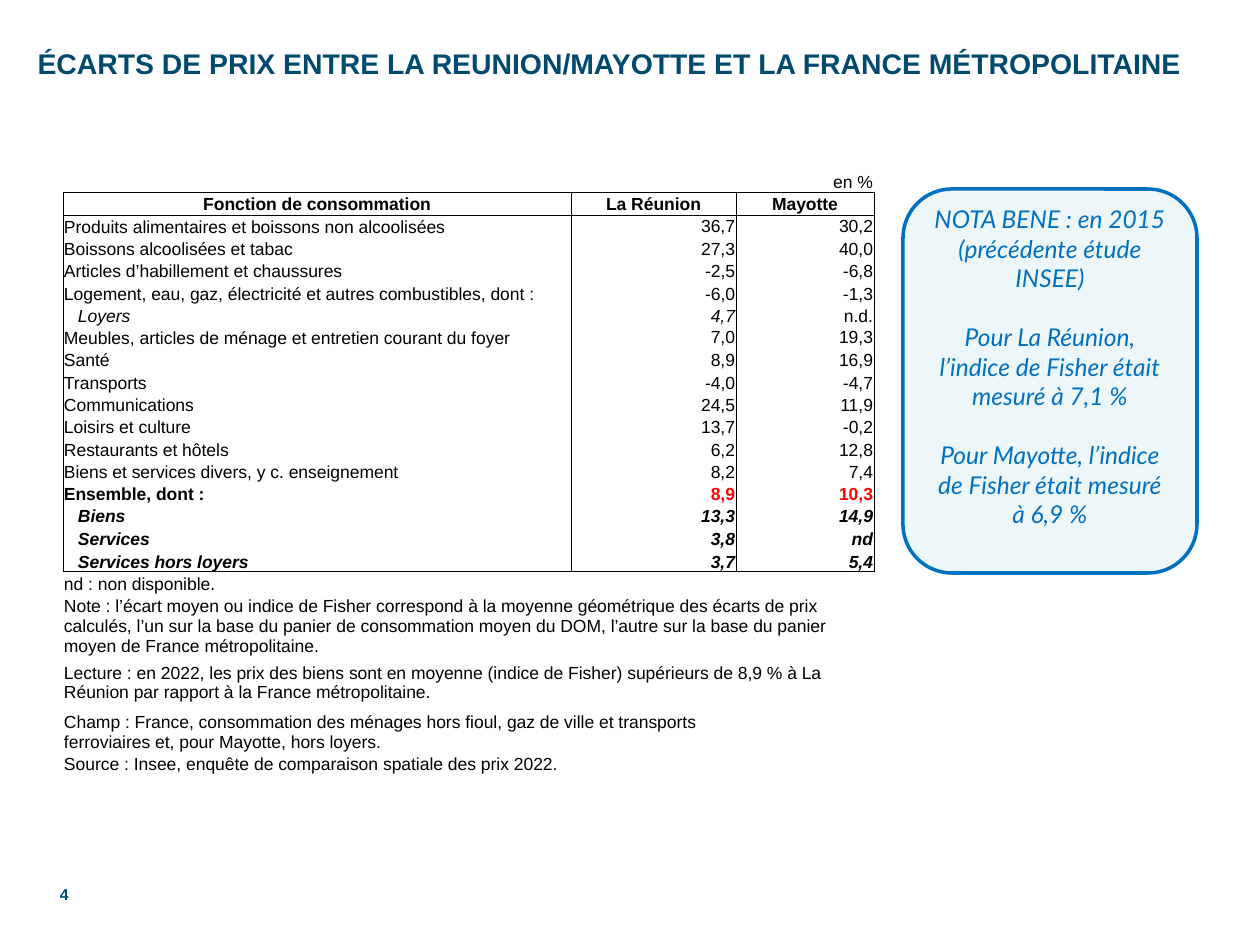
from dataclasses import dataclass

from lxml.etree import SubElement
from pptx import Presentation
from pptx.dml.color import RGBColor
from pptx.enum.shapes import MSO_SHAPE
from pptx.enum.text import MSO_ANCHOR, MSO_AUTO_SIZE, PP_ALIGN
from pptx.oxml import parse_xml
from pptx.oxml.ns import nsdecls, qn
from pptx.util import Pt

PX = 914400 // 126


@dataclass(frozen=True)
class Theme:
    navy: str = "004A6F"
    blue: str = "0070C0"
    pale: str = "EDF7FA"
    black: str = "000000"
    red: str = "FF0000"
    body_font: str = "Arial"
    note_font: str = "Lato"
    title_size: float = 16.2
    note_size: float = 14
    table_size: float = 10
    number_size: float = 9


theme = Theme()


def format_text(frame, size, color, font=theme.body_font, bold=False, italic=False,
                align=PP_ALIGN.LEFT, anchor=MSO_ANCHOR.MIDDLE):
    frame.word_wrap = True
    frame.vertical_anchor = anchor
    for paragraph in frame.paragraphs:
        paragraph.alignment = align
        for run in paragraph.runs:
            run.font.size = Pt(size)
            run.font.name = font
            run.font.bold = bold
            run.font.italic = italic
            run.font.color.rgb = RGBColor.from_string(color)


def set_borders(cell, ruled):
    """Rule the sides named in ruled (letters of LRTB) and clear the others."""
    properties = cell._tc.get_or_add_tcPr()
    for position, side in enumerate("LRTB"):
        paint = (f'<a:solidFill><a:srgbClr val="{theme.black}"/></a:solidFill>'
                 if side in ruled else "<a:noFill/>")
        properties.insert(position, parse_xml(
            f'<a:ln{side} {nsdecls("a")} w="6350">{paint}</a:ln{side}>'))


presentation = Presentation()
presentation.slide_width = 1260 * PX
presentation.slide_height = 945 * PX
slide = presentation.slides.add_slide(presentation.slide_layouts[5])

title = slide.shapes.title
title.left, title.top, title.width, title.height = (n * PX for n in (25, 44, 1266, 39))
title.text_frame.text = "ÉCARTS DE PRIX ENTRE LA REUNION/MAYOTTE ET LA FRANCE MÉTROPOLITAINE"
title.text_frame.auto_size = MSO_AUTO_SIZE.NONE
format_text(title.text_frame, theme.title_size, theme.navy, bold=True)

page_number = slide.shapes.add_textbox(5 * PX, 869 * PX, 76 * PX, 50 * PX)
page_number.text_frame.text = "4"
format_text(page_number.text_frame, theme.number_size, theme.navy, bold=True,
            align=PP_ALIGN.RIGHT)

nota_bene = slide.shapes.add_shape(
    MSO_SHAPE.ROUNDED_RECTANGLE, 903 * PX, 189 * PX, 294 * PX, 384 * PX)
nota_bene.shadow.inherit = False
nota_bene.fill.solid()
nota_bene.fill.fore_color.rgb = RGBColor.from_string(theme.pale)
nota_bene.line.color.rgb = RGBColor.from_string(theme.blue)
nota_bene.line.width = Pt(2)
nota_bene.text_frame.text = "\n".join([
    "NOTA BENE : en 2015 (précédente étude INSEE)",
    "Pour La Réunion, l’indice de Fisher était mesuré à 7,1 %",
    "Pour Mayotte, l’indice de Fisher était mesuré à 6,9 %",
])
nota_bene.text_frame.margin_bottom = 35 * PX
for paragraph in nota_bene.text_frame.paragraphs[1:]:
    paragraph.space_before = Pt(17)
format_text(nota_bene.text_frame, theme.note_size, theme.blue, theme.note_font,
            italic=True, align=PP_ALIGN.CENTER)

unit_row = ("", "", "en %")
header = ("Fonction de consommation", "La Réunion", "Mayotte")
prices = [
    ("Produits alimentaires et boissons non alcoolisées", "36,7", "30,2"),
    ("Boissons alcoolisées et tabac", "27,3", "40,0"),
    ("Articles d’habillement et chaussures", "-2,5", "-6,8"),
    ("Logement, eau, gaz, électricité et autres combustibles, dont :", "-6,0", "-1,3"),
    ("Loyers", "4,7", "n.d."),
    ("Meubles, articles de ménage et entretien courant du foyer", "7,0", "19,3"),
    ("Santé", "8,9", "16,9"),
    ("Transports", "-4,0", "-4,7"),
    ("Communications", "24,5", "11,9"),
    ("Loisirs et culture", "13,7", "-0,2"),
    ("Restaurants et hôtels", "6,2", "12,8"),
    ("Biens et services divers, y c. enseignement", "8,2", "7,4"),
    ("Ensemble, dont :", "8,9", "10,3"),
    ("Biens", "13,3", "14,9"),
    ("Services", "3,8", "nd"),
    ("Services hors loyers", "3,7", "5,4"),
]
# Each remark: text, row height, columns spanned, anchor
remarks = [
    ("nd : non disponible.", 22, 1, MSO_ANCHOR.BOTTOM),
    ("Note : l’écart moyen ou indice de Fisher correspond à la moyenne géométrique des "
     "écarts de prix calculés, l’un sur la base du panier de consommation moyen du DOM, "
     "l’autre sur la base du panier moyen de France métropolitaine.", 61, 3, MSO_ANCHOR.MIDDLE),
    ("Lecture : en 2022, les prix des biens sont en moyenne (indice de Fisher) supérieurs "
     "de 8,9 % à La Réunion par rapport à la France métropolitaine.", 49, 3, MSO_ANCHOR.MIDDLE),
    ("Champ : France, consommation des ménages hors fioul, gaz de ville et transports "
     "ferroviaires et, pour Mayotte, hors loyers.", 45, 2, MSO_ANCHOR.BOTTOM),
    ("Source : Insee, enquête de comparaison spatiale des prix 2022.", 22, 1, MSO_ANCHOR.BOTTOM),
]
sub_items = {"Loyers", "Biens", "Services", "Services hors loyers"}
totals = {"Ensemble, dont :", "Biens", "Services", "Services hors loyers"}
centred_values = {prices[0][0], prices[5][0]}

rows = [unit_row, header, *prices] + [(remark[0], "", "") for remark in remarks]
first_remark = len(rows) - len(remarks)
grid_height = 401
edges = [round(grid_height * i / first_remark) for i in range(first_remark + 1)]
heights = [low - high for high, low in zip(edges, edges[1:])] + [r[1] for r in remarks]
widths = [508, 165, 138]

table = slide.shapes.add_table(
    len(rows), len(widths), 63 * PX, 170 * PX, sum(widths) * PX, sum(heights) * PX).table
table.first_row = table.horz_banding = False
for column, width in zip(table.columns, widths):
    column.width = width * PX

for r, (texts, height) in enumerate(zip(rows, heights)):
    table.rows[r].height = height * PX
    label = texts[0]
    is_header = r == 1
    in_grid = 1 <= r < first_remark
    ruled = "LR" if in_grid else ""
    ruled += "T" if r in (1, 2, first_remark) else ""
    ruled += "B" if r in (0, 1, first_remark - 1) else ""
    for c, text in enumerate(texts):
        cell = table.cell(r, c)
        cell.fill.background()
        set_borders(cell, ruled)
        indented = c == 0 and label in sub_items
        cell.margin_left = (15 if indented else 1) * PX
        cell.margin_top = cell.margin_right = PX
        cell.margin_bottom = 0
        if not text:
            end = SubElement(cell.text_frame.paragraphs[0]._p, qn("a:endParaRPr"))
            end.set("sz", str(theme.table_size * 100))
            continue
        cell.text_frame.text = text
        is_result = label.startswith("Ensemble") and c > 0
        format_text(
            cell.text_frame, theme.table_size, theme.red if is_result else theme.black,
            bold=is_header or label in totals,
            italic=label in sub_items and text != "n.d.",
            align=PP_ALIGN.CENTER if is_header else PP_ALIGN.RIGHT if c else PP_ALIGN.LEFT)
        middle = is_header or (c > 0 and label in centred_values)
        cell.vertical_anchor = MSO_ANCHOR.MIDDLE if middle else MSO_ANCHOR.BOTTOM

for r, (_, _, span, anchor) in enumerate(remarks, first_remark):
    table.cell(r, 0).vertical_anchor = anchor
    if span > 1:
        table.cell(r, 0).merge(table.cell(r, span - 1))

presentation.save("out.pptx")
